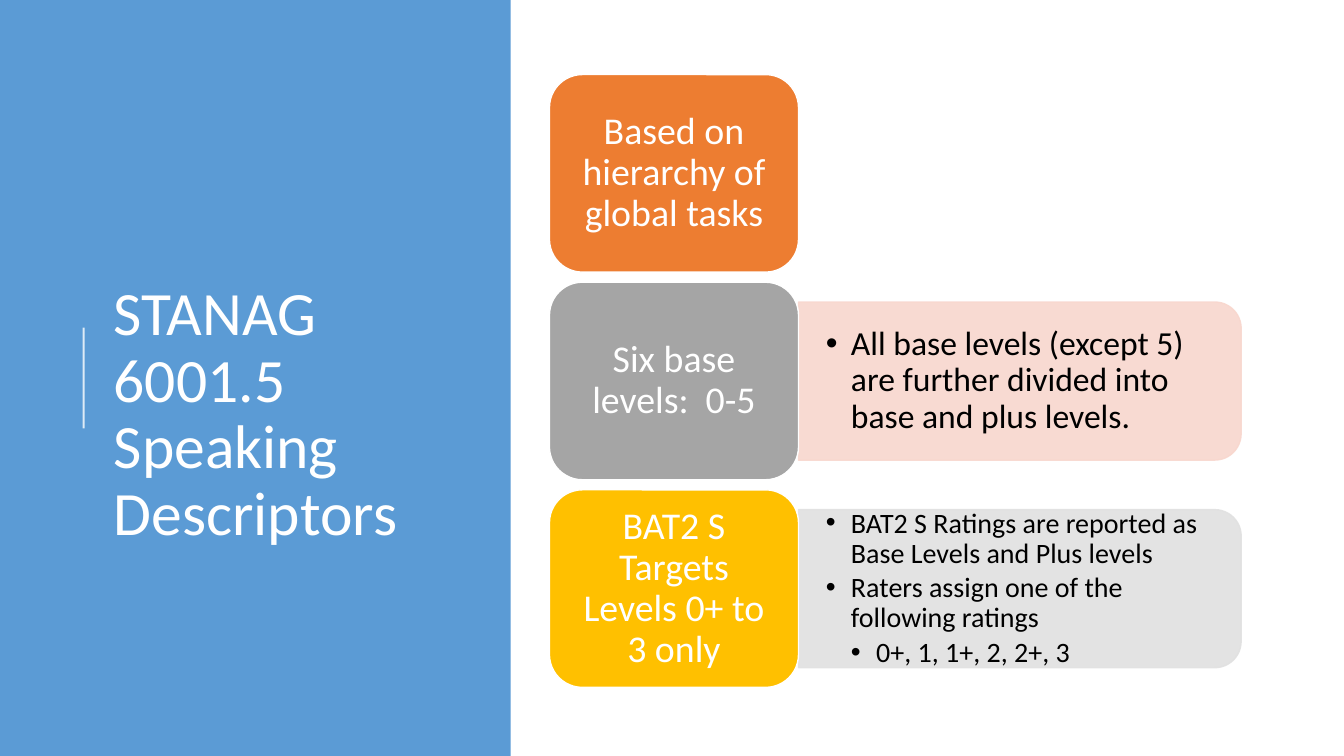
from lxml import etree
from pptx import Presentation
from pptx.dml.color import RGBColor
from pptx.enum.shapes import MSO_CONNECTOR, MSO_SHAPE
from pptx.enum.text import MSO_ANCHOR, PP_ALIGN
from pptx.oxml.ns import qn
from pptx.util import Inches, Pt

RECTANGLE = MSO_SHAPE.RECTANGLE
ROUNDED = MSO_SHAPE.ROUNDED_RECTANGLE
TWO_ROUNDED = MSO_SHAPE.ROUND_2_SAME_RECTANGLE
STRAIGHT = MSO_CONNECTOR.STRAIGHT
MIDDLE = MSO_ANCHOR.MIDDLE
LEFT, CENTER = PP_ALIGN.LEFT, PP_ALIGN.CENTER

WIDTH, HEIGHT = 13.33, 7.5
SIDEBAR_WIDTH = 0.38 * WIDTH
CARD_LEFT, CARD_WIDTH = 5.45, 2.47
PANEL_LEFT, PANEL_WIDTH = CARD_LEFT + CARD_WIDTH, 4.39
ROW_TOP, ROW_HEIGHT, ROW_GAP = 0.74, 1.96, 0.1
PANEL_HEIGHT = 0.8 * ROW_HEIGHT
INDENT = 0.25
FONT = "Calibri"
WHITE, BLACK, BLUE = "FFFFFF", "000000", "5B9BD5"

ROWS = [
    ("Based on hierarchy of global tasks", "ED7D31", None, 0, []),
    ("Six base levels:  0-5", "A5A5A5", "F8D7CE", 24, [
        (1, "All base levels (except 5) are further divided into base and plus levels."),
    ]),
    ("BAT2 S Targets Levels 0+ to 3 only", "FFC000", "E1E1E1", 20, [
        (1, "BAT2 S Ratings are reported as Base Levels and Plus levels"),
        (1, "Raters assign one of the following ratings"),
        (2, "0+, 1, 1+, 2, 2+, 3"),
    ]),
]


def color(value):
    """Turn a hex string into a colour."""
    return RGBColor.from_string(value)


def set_opacity(element, percent):
    """Make every solid colour inside an element partly transparent."""
    for solid in element.iter(qn("a:srgbClr")):
        etree.SubElement(solid, qn("a:alpha"), val=str(percent * 1000))


def add_block(slide, kind, left, top, width, height, fill, line=None):
    """Add a filled preset shape with an optional thin outline."""
    shape = slide.shapes.add_shape(
        kind, Inches(left), Inches(top), Inches(width), Inches(height))
    shape.shadow.inherit = False
    shape.fill.solid()
    shape.fill.fore_color.rgb = color(fill)
    if line:
        shape.line.color.rgb = color(line)
        shape.line.width = Pt(1)
    else:
        shape.line.fill.background()
    return shape


def set_frame(shape, left, top, right, bottom):
    """Wrap and centre the text vertically within the given insets."""
    frame = shape.text_frame
    frame.word_wrap = True
    frame.vertical_anchor = MIDDLE
    frame.margin_left, frame.margin_top = Inches(left), Inches(top)
    frame.margin_right, frame.margin_bottom = Inches(right), Inches(bottom)
    return frame


def write(paragraph, text, size, text_color, alignment=LEFT):
    """Write one run into a paragraph."""
    paragraph.alignment = alignment
    paragraph.line_spacing = 0.9
    run = paragraph.add_run()
    run.text = text
    run.font.name = FONT
    run.font.size = Pt(size)
    run.font.color.rgb = color(text_color)


def set_bullet(paragraph, level):
    """Give a paragraph a hanging bullet at its level."""
    paragraph.level = level
    properties = paragraph._p.get_or_add_pPr()
    properties.set("marL", str(Inches(INDENT * level)))
    properties.set("indent", str(Inches(-INDENT)))
    etree.SubElement(properties, qn("a:buFont"), typeface="Arial")
    etree.SubElement(properties, qn("a:buChar"), char="•")


def add_sidebar(slide):
    """Add the blue side panel with its title and accent line."""
    add_block(slide, RECTANGLE, 0, 0, SIDEBAR_WIDTH, HEIGHT, BLUE)
    title = slide.shapes.add_textbox(
        Inches(1.03), Inches(0.78), Inches(3.69), Inches(6.02))
    frame = set_frame(title, 0.1, 0.71, 0.1, 0.05)
    write(frame.paragraphs[0], "STANAG 6001.5 Speaking Descriptors", 44, WHITE)
    accent = slide.shapes.add_connector(
        STRAIGHT, Inches(0.83), Inches(4.25), Inches(0.83), Inches(3.25))
    accent.line.color.rgb = color(WHITE)
    accent.line.width = Pt(1.5)
    set_opacity(accent._element.spPr, 80)
    etree.SubElement(accent._element.spPr, qn("a:effectLst"))


def add_panel(slide, middle, fill, size, bullets):
    """Add a panel rounded on its right side, with bullets over it."""
    center = PANEL_LEFT + PANEL_WIDTH / 2
    panel = add_block(slide, TWO_ROUNDED, center - PANEL_HEIGHT / 2,
                      middle - PANEL_WIDTH / 2, PANEL_HEIGHT, PANEL_WIDTH, fill, fill)
    panel.rotation = 90
    set_opacity(panel._element.spPr, 90)
    text_height = 0.9 * PANEL_HEIGHT
    box = slide.shapes.add_textbox(
        Inches(PANEL_LEFT), Inches(middle - text_height / 2),
        Inches(PANEL_WIDTH - 0.08), Inches(text_height))
    frame = set_frame(box, 0.27, 0.14, 0.27, 0.14)
    for index, (level, text) in enumerate(bullets):
        paragraph = frame.add_paragraph() if index else frame.paragraphs[0]
        write(paragraph, text, size, BLACK)
        paragraph.space_after = Pt(0.15 * size)
        set_bullet(paragraph, level)


def add_card(slide, top, text, fill):
    """Add a rounded card with a centred label."""
    card = add_block(slide, ROUNDED, CARD_LEFT, top, CARD_WIDTH, ROW_HEIGHT, fill, WHITE)
    frame = set_frame(card, 0.11, 0.06, 0.11, 0.06)
    write(frame.paragraphs[0], text, 27, WHITE, CENTER)


def main():
    """Build the slide and save it."""
    presentation = Presentation()
    presentation.slide_width = Inches(WIDTH)
    presentation.slide_height = Inches(HEIGHT)
    slide = presentation.slides.add_slide(presentation.slide_layouts[6])
    add_sidebar(slide)
    for index, (label, fill, panel_fill, size, bullets) in enumerate(ROWS):
        top = ROW_TOP + index * (ROW_HEIGHT + ROW_GAP)
        if bullets:
            add_panel(slide, top + ROW_HEIGHT / 2, panel_fill, size, bullets)
        add_card(slide, top, label, fill)
    presentation.save("out.pptx")


if __name__ == "__main__":
    main()
